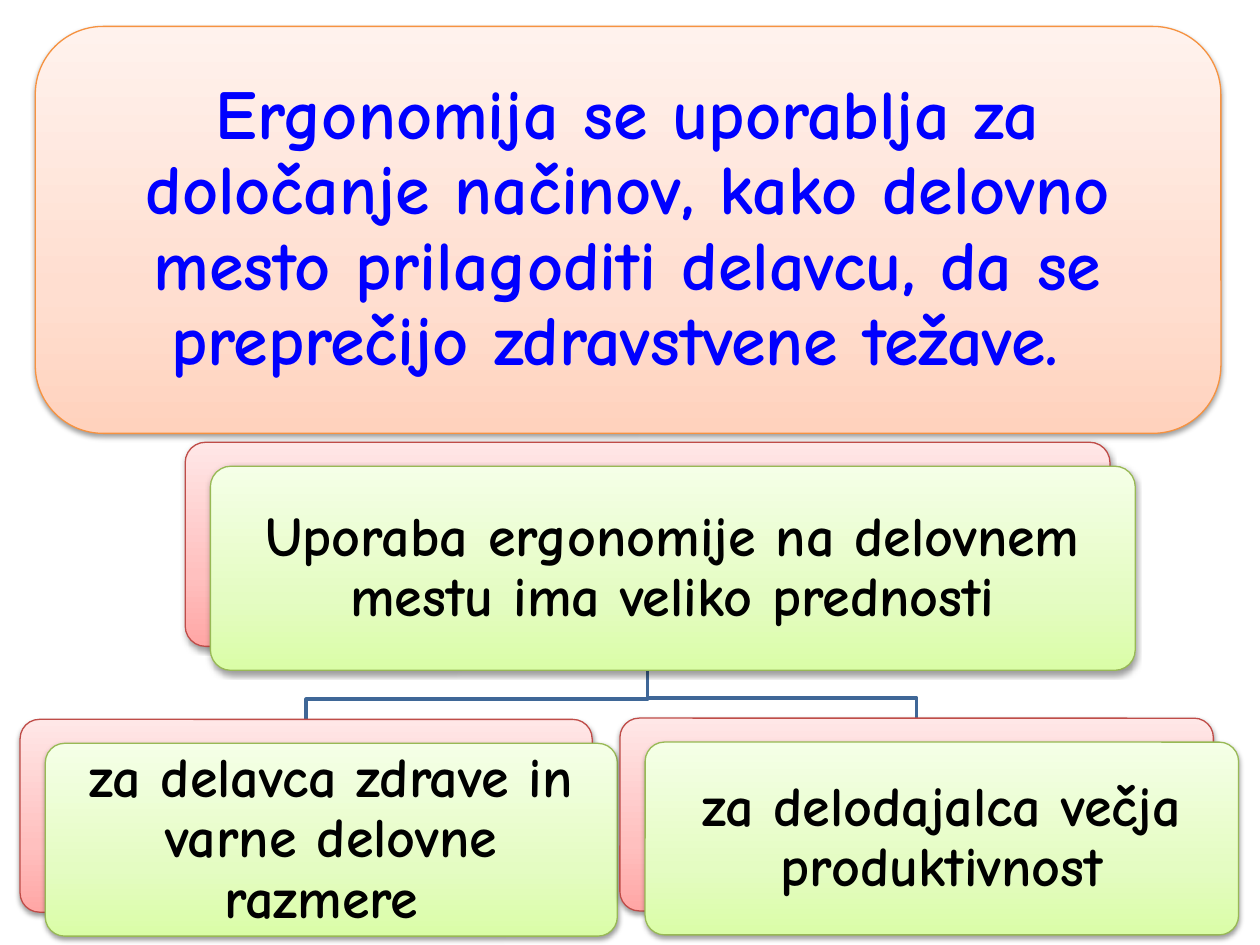
from dataclasses import dataclass

from lxml.etree import SubElement
from pptx import Presentation
from pptx.dml.color import RGBColor
from pptx.enum.shapes import MSO_SHAPE
from pptx.enum.text import MSO_ANCHOR, MSO_AUTO_SIZE, PP_ALIGN
from pptx.oxml.ns import qn
from pptx.util import Inches, Pt


@dataclass(frozen=True)
class Theme:
    font: str = "Comic Neue"
    title_size: int = 40
    card_size: int = 32
    title_color: str = "0000FF"
    text_color: str = "000000"
    branch: str = "3F6797"
    orange: tuple = ("F69240", "FFD2BD", "FFDED0", "FFF2ED")
    red: tuple = ("BF4C48", "FFA6A5", "FFC0BF", "FFE7E7")
    green: tuple = ("98B955", "DAFDA7", "E4FCC2", "F5FFE7")


class Deck:
    """Draws the elements of one slide in a shared style."""

    def __init__(self, s, theme):
        self.s, self.theme = s, theme

    def panel(self, x, y, w, h, colors, radius=None):
        sp = self.s.shapes.add_shape(MSO_SHAPE.ROUNDED_RECTANGLE,
                                     Inches(x), Inches(y), Inches(w), Inches(h))
        if radius is not None:
            sp.adjustments[0] = radius
        edge, *stops = colors
        sp.fill.gradient()
        sp.fill.gradient_angle = 90
        gs_list = sp.element.spPr.find(".//" + qn("a:gsLst"))
        gs_list.clear()
        for pos, color in zip((0, 35, 100), stops):
            gs = SubElement(gs_list, qn("a:gs"), pos=str(pos * 1000))
            SubElement(gs, qn("a:srgbClr"), val=color)
        sp.line.color.rgb = RGBColor.from_string(edge)
        sp.line.width = Pt(0.75)
        self.shadow(sp)
        return sp

    def shadow(self, sp):
        sp.shadow.inherit = False
        effects = sp.element.spPr.find(qn("a:effectLst"))
        outer = SubElement(effects, qn("a:outerShdw"), blurRad=str(Pt(3.1)),
                           dist=str(Pt(1.6)), dir="5400000", rotWithShape="0")
        color = SubElement(outer, qn("a:srgbClr"), val="000000")
        SubElement(color, qn("a:alpha"), val="38000")

    def label(self, sp, text, size, color, inset):
        tf = sp.text_frame
        tf.text = text
        tf.word_wrap = True
        tf.auto_size = MSO_AUTO_SIZE.NONE
        tf.vertical_anchor = MSO_ANCHOR.MIDDLE
        tf.margin_left = tf.margin_right = Inches(inset)
        tf.margin_top = tf.margin_bottom = Inches(inset)
        p = tf.paragraphs[0]
        p.alignment = PP_ALIGN.CENTER
        p.line_spacing = 0.9
        font = p.runs[0].font
        font.name, font.size, font.bold = self.theme.font, Pt(size), True
        font.color.rgb = RGBColor.from_string(color)

    def title(self, text):
        self.panel(0.28, 0.21, 9.41, 3.23, self.theme.orange)
        sp = self.s.shapes.title
        sp.left, sp.top = Inches(0.43), Inches(0.37)
        sp.width, sp.height = Inches(9.1), Inches(2.91)
        self.label(sp, text, self.theme.title_size, self.theme.title_color, 0.17)
        sp.element.getparent().append(sp.element)

    def card(self, text, x, y, w, h, offset=0.2):
        self.panel(x, y, w, h, self.theme.red, 0.1)
        sp = self.panel(x + offset, y + offset - 0.01, w, h, self.theme.green, 0.1)
        self.label(sp, text, self.theme.card_size, self.theme.text_color, 0.13)

    def branch(self, parent, child):
        x1, y1 = parent[0] + parent[2] / 2, parent[1] + parent[3]
        x2, y2 = child[0] + child[2] / 2, child[1]
        bend = y2 - 0.16
        fb = self.s.shapes.build_freeform(Inches(x1), Inches(y1))
        fb.add_line_segments([(Inches(x), Inches(y)) for x, y in
                              ((x1, bend), (x2, bend), (x2, y2))], close=False)
        sp = fb.convert_to_shape()
        sp.fill.background()
        sp.line.color.rgb = RGBColor.from_string(self.theme.branch)
        sp.line.width = Pt(2)
        sp.shadow.inherit = False


def main():
    prs = Presentation()
    prs.slide_width, prs.slide_height = Inches(10), Inches(7.5)
    deck = Deck(prs.slides.add_slide(prs.slide_layouts[5]), Theme())
    deck.title("Ergonomija se uporablja za določanje načinov, kako delovno mesto "
               "prilagoditi delavcu, da se preprečijo zdravstvene težave. ")
    benefits = (1.47, 3.51, 7.34, 1.62)
    worker = (0.16, 5.71, 4.54, 1.53)
    employer = (4.92, 5.7, 4.71, 1.53)
    for child in (employer, worker):
        deck.branch(benefits, child)
    deck.card("Uporaba ergonomije na delovnem mestu ima veliko prednosti", *benefits)
    deck.card("za delavca zdrave in varne delovne razmere ", *worker)
    deck.card("za delodajalca večja produktivnost", *employer)
    prs.save("out.pptx")


if __name__ == "__main__":
    main()
